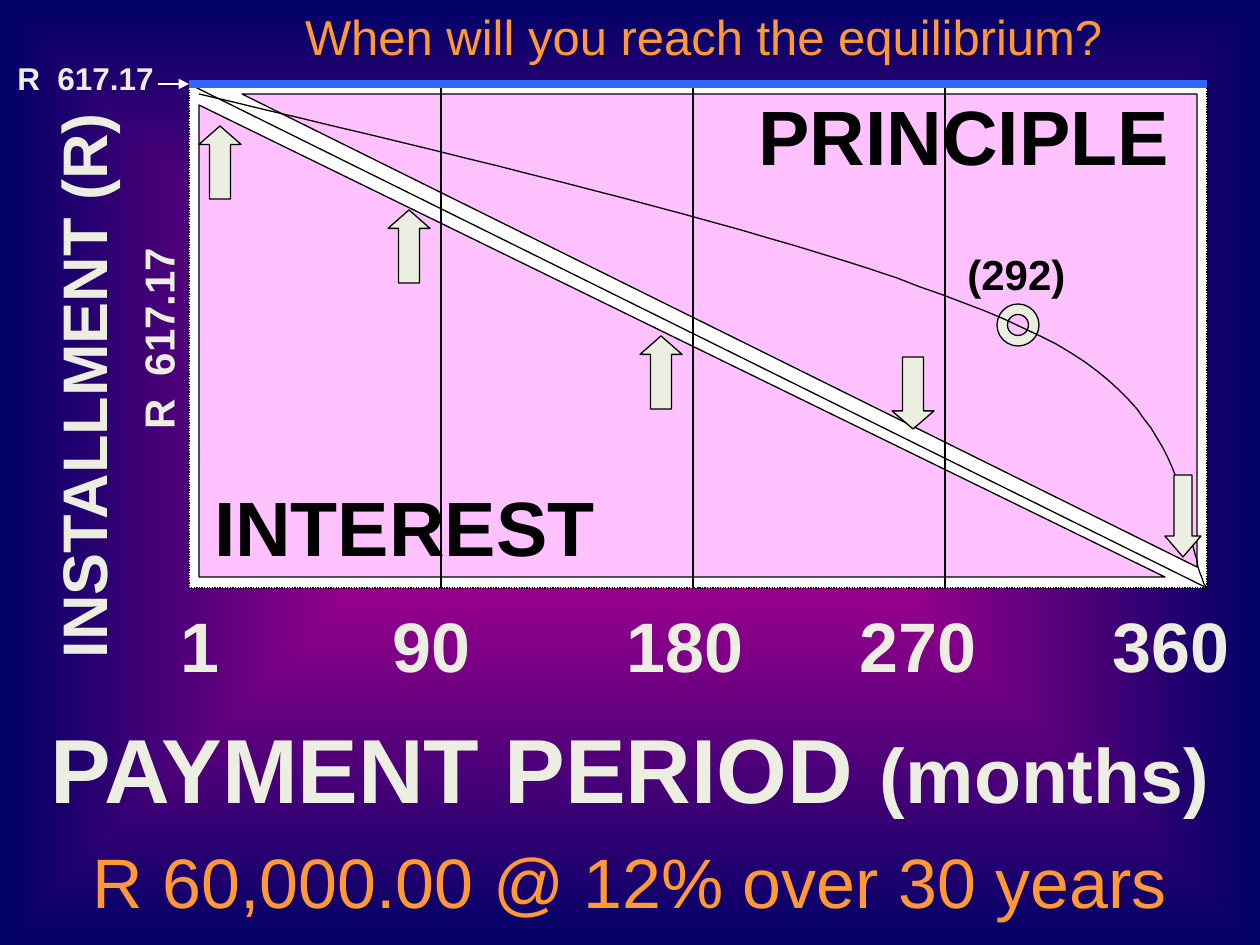
from lxml import etree
from pptx import Presentation
from pptx.dml.color import RGBColor
from pptx.enum.dml import MSO_LINE
from pptx.enum.shapes import MSO_CONNECTOR, MSO_SHAPE
from pptx.enum.text import MSO_ANCHOR, MSO_AUTO_SIZE, PP_ALIGN
from pptx.oxml.ns import qn
from pptx.util import Pt

COLORS = {
    "glow": "CC0099", "navy": "000066", "white": "FFFFFF", "black": "000000",
    "pink": "FF99FF", "cream": "EDEEE2", "orange": "FF9933", "blue": "3366FF",
}
UNIT = 914400 / 126  # EMU in one px
WIDE, HIGH = 1260, 945
LEFT, TOP, RIGHT, BASE = 189, 84, 1207, 588  # chart frame
GRID = [441, 693, 945]

TITLE = "When will you reach the equilibrium?"
RATE = "R\t617.17"
MONTHS = [1, 90, 180, 270, 360]
STOPS = [212, 446, 679, 932]  # tab stops of the months after the first

# text runs with sizes, box, format
LABELS = [
    ([("INTEREST", 44)], (168, 473, 473, 105), dict(color="black", center=True)),
    ([("PRINCIPLE", 44)], (746, 82, 473, 105), dict(color="black")),
    ([("(292)", 24)], (955, 242, 126, 63), dict(color="black")),
    ([("PAYMENT PERIOD", 52), (" ", 54), ("(months)", 44)],
     (0, 703, 1260, 126), dict(center=True)),
    ([("INSTALLMENT (R)", 36)], (-238, 306, 641, 88), dict(turn=270)),
    ([(RATE, 24)], (48, 300, 220, 63), dict(turn=270, tabs=[53])),
    ([(RATE, 18)], (5, 53, 173, 50), dict(tabs=[40])),
    ([("\t".join(map(str, MONTHS)), 40)], (168, 596, 1092, 97), dict(tabs=STOPS)),
    ([("R 60,000.00 @ 12% over 30 years", 40)], (73, 832, 1113, 97),
     dict(color="orange", bold=False, center=True)),
]
UP = (MSO_SHAPE.UP_ARROW, 42, 73, 0.44)
ARROWS = [
    (199, 126, *UP),
    (388, 210, *UP),
    (640, 336, *UP),
    (892, 357, MSO_SHAPE.DOWN_ARROW, 42, 72, 0.43),
    (1165, 475, MSO_SHAPE.DOWN_ARROW, 36, 82, 0.58),
]
CURVES = [
    [(199, 94), (536, 174), (872, 253), (1040, 336)],
    [(1040, 336), (1207, 418), (1179, 546), (1207, 588)],
]


def emu(*values):
    return [round(v * UNIT) for v in values]


def rgb(name):
    return RGBColor.from_string(COLORS[name])


def sub(node, tag, **attrs):
    return etree.SubElement(node, qn(tag), {k: str(v) for k, v in attrs.items()})


def write(shape, runs, color="cream", bold=True, center=False, tabs=(), turn=0):
    """Fill a shape with one paragraph of (text, size) runs."""
    shape.rotation = turn
    frame = shape.text_frame
    frame.word_wrap = True
    frame.auto_size = MSO_AUTO_SIZE.NONE
    frame.vertical_anchor = MSO_ANCHOR.TOP
    para = frame.paragraphs[0]
    para.alignment = PP_ALIGN.CENTER if center else PP_ALIGN.LEFT
    if tabs:
        stops = sub(para._p.get_or_add_pPr(), "a:tabLst")
        for pos in emu(*tabs):
            sub(stops, "a:tab", pos=pos, algn="l")
    for text, size in runs:
        run = para.add_run()
        run.text = text
        font = run.font
        font.name, font.size, font.bold = "Arial", Pt(size), bold
        font.color.rgb = rgb(color)


def draw(kind, box, fill, alpha=None, adjust=(), turn=0):
    shape = shapes.add_shape(kind, *emu(*box))
    shape.shadow.inherit = False
    shape.rotation = turn
    shape.fill.solid()
    shape.fill.fore_color.rgb = rgb(fill)
    if alpha:
        color = shape._element.spPr.find(qn("a:solidFill"))[0]
        sub(color, "a:alpha", val=alpha * 1000)
    shape.line.color.rgb = rgb("black")
    shape.line.width = Pt(0.75)
    for i, value in enumerate(adjust):
        shape.adjustments[i] = value
    return shape


def rule(ends, color="black", width=0.75, head=False):
    line = shapes.add_connector(MSO_CONNECTOR.STRAIGHT, *emu(*ends))
    line.line.color.rgb = rgb(color)
    line.line.width = Pt(width)
    if head:
        sub(line.line._get_or_add_ln(), "a:tailEnd", type="triangle")
    sub(line._element.spPr, "a:effectLst")


def trace(curve, steps=30):
    """Points along a cubic curve, without its start."""
    for i in range(1, steps + 1):
        t = i / steps
        parts = ((1 - t) ** 3, 3 * t * (1 - t) ** 2, 3 * t * t * (1 - t), t ** 3)
        yield tuple(sum(w * p[axis] for w, p in zip(parts, curve)) for axis in (0, 1))


def paint(slide):
    """Glow from the centre of the slide outward."""
    fill = slide.background.fill
    fill.gradient()
    for stop, name in zip(fill.gradient_stops, ("glow", "navy")):
        stop.color.rgb = rgb(name)
    grad = slide._element.find(".//" + qn("a:gradFill"))
    grad.remove(grad.find(qn("a:lin")))
    rect = sub(grad, "a:path", path="shape")
    sub(rect, "a:fillToRect", l=50000, t=50000, r=50000, b=50000)


deck = Presentation()
deck.slide_width, deck.slide_height = emu(WIDE, HIGH)
slide = deck.slides.add_slide(deck.slide_layouts[5])
shapes = slide.shapes
paint(slide)

title = shapes.title
title.left, title.top, title.width, title.height = emu(147, 0, 1113, 72)
write(title, [(TITLE, 28)], color="orange", bold=False, center=True)

frame = draw(MSO_SHAPE.RECTANGLE, (LEFT, TOP, RIGHT - LEFT, BASE - TOP), "white")
frame.line.dash_style = MSO_LINE.ROUND_DOT
draw(MSO_SHAPE.RIGHT_TRIANGLE, (199, 105, 966, 472), "pink", alpha=60)
draw(MSO_SHAPE.RIGHT_TRIANGLE, (242, 94, 955, 473), "pink", alpha=60, turn=180)

for x in GRID:
    rule((x, BASE, x, TOP))
rule((LEFT, TOP, RIGHT, BASE))
draw(MSO_SHAPE.DONUT, (997, 304, 42, 42), "cream", adjust=[0.25])

pen = shapes.build_freeform(*CURVES[0][0], scale=UNIT)
pen.add_line_segments([p for c in CURVES for p in trace(c)], close=False)
path = pen.convert_to_shape()
path.shadow.inherit = False
path.fill.background()
path.line.color.rgb = rgb("black")
path.line.width = Pt(0.75)

for x, y, kind, wide, high, tip in ARROWS:
    draw(kind, (x, y, wide, high), "cream", adjust=[0.5, tip])
rule((LEFT, TOP, RIGHT, TOP), color="blue", width=5)
rule((158, TOP, LEFT, TOP), color="white", head=True)

for runs, box, style in LABELS:
    write(shapes.add_textbox(*emu(*box)), runs, **style)

deck.save("out.pptx")
